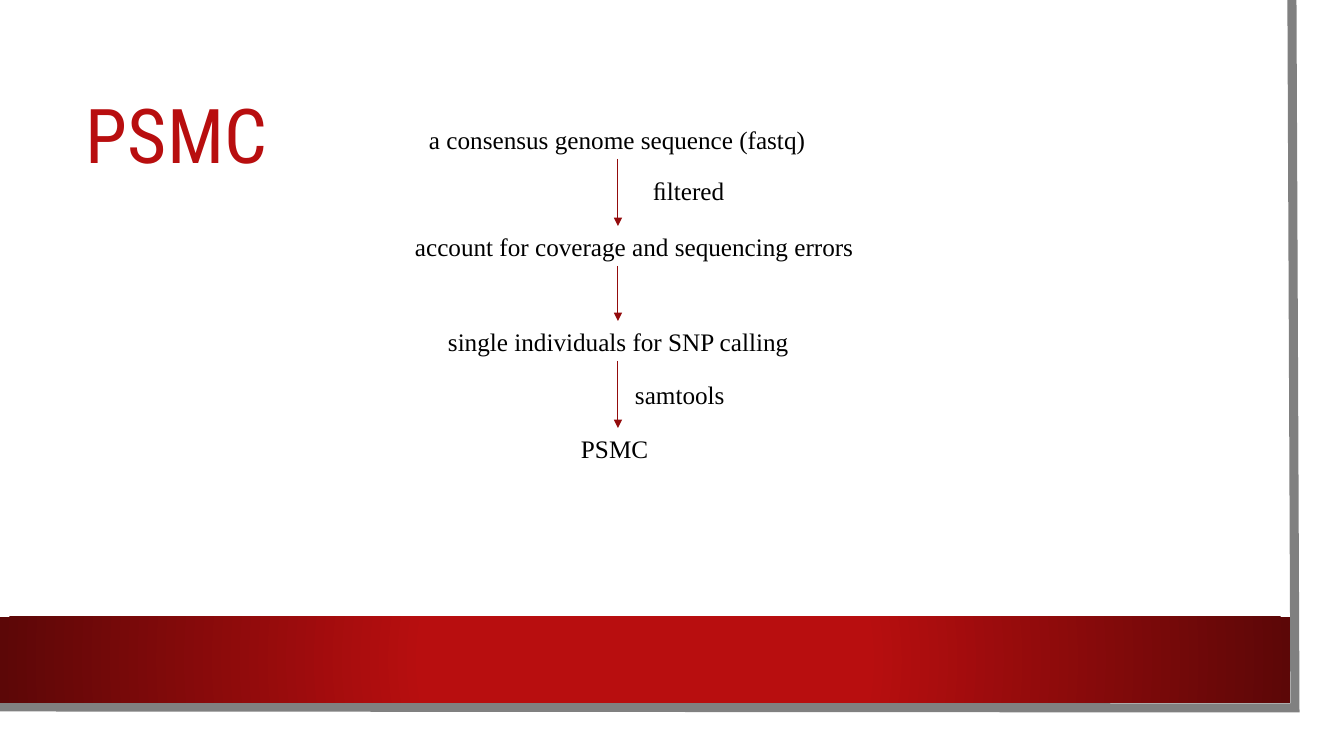
from lxml import etree
from pptx import Presentation
from pptx.dml.color import RGBColor
from pptx.enum.shapes import MSO_CONNECTOR, MSO_SHAPE
from pptx.enum.text import MSO_ANCHOR
from pptx.oxml.ns import qn
from pptx.util import Emu, Pt

STRAIGHT, RECTANGLE = MSO_CONNECTOR.STRAIGHT, MSO_SHAPE.RECTANGLE
TOP, MIDDLE = MSO_ANCHOR.TOP, MSO_ANCHOR.MIDDLE
TOP_SITE, BOTTOM_SITE = 0, 2

WHITE = RGBColor(0xFF, 0xFF, 0xFF)
BLACK = RGBColor(0x00, 0x00, 0x00)
GREY = RGBColor(0x80, 0x80, 0x80)
RED = RGBColor(0xB8, 0x0E, 0x0F)
DARK_RED = RGBColor(0x5C, 0x07, 0x07)
ARROW_RED = RGBColor(0x93, 0x0B, 0x0C)

# Content: lengths in px; each entry is text, left, top, width, left inset
TITLE = "PSMC"
STEPS = [
    ("a consensus genome sequence (fastq)", 413, 119, 410, 16),
    ("account for coverage and sequencing errors", 399, 226, 499, 16),
    ("single individuals for SNP calling", 432, 321, 372, 16),
    ("PSMC", 571, 428, 94, 10),
]
LABELS = [
    ("ﬁltered", 637, 170, 105, 16),
    ("samtools", 625, 374, 273, 10),
]
FRAME = [(1292, 0), (1295, 708), (-3, 707)]
BAR_STOPS = [(0.34, RED), (1.0, DARK_RED)]
STEP_HEIGHT = 40
ARROW_X = 618


def px(length):
    return Emu(round(length * 914400 / 100.8))


deck = Presentation()
deck.slide_width, deck.slide_height = px(1344), px(756)
page = deck.slides.add_slide(deck.slide_layouts[6])


def add_rectangle(left, top, width, height):
    box = page.shapes.add_shape(RECTANGLE, px(left), px(top), px(width), px(height))
    box.shadow.inherit = False
    box.line.fill.background()
    return box


def add_text(text, left, top, width, height=STEP_HEIGHT, inset=10, size=18,
             font="Times New Roman", color=BLACK, anchor=TOP, spacing=1.0):
    box = page.shapes.add_textbox(px(left), px(top), px(width), px(height))
    frame = box.text_frame
    frame.word_wrap = True
    frame.vertical_anchor = anchor
    frame.margin_left = px(inset)
    para = frame.paragraphs[0]
    para.line_spacing = spacing
    span = para.add_run()
    span.text = text
    span.font.name, span.font.size = font, Pt(size)
    span.font.color.rgb = color
    return box


def add_arrow(upper, lower):
    arrow = page.shapes.add_connector(
        STRAIGHT, px(ARROW_X), upper.top + upper.height, px(ARROW_X), lower.top)
    if is_centred(upper):
        arrow.begin_connect(upper, BOTTOM_SITE)
    if is_centred(lower):
        arrow.end_connect(lower, TOP_SITE)
    arrow.line.color.rgb, arrow.line.width = ARROW_RED, Pt(0.75)
    etree.SubElement(arrow.line._get_or_add_ln(), qn("a:tailEnd"), type="triangle")
    etree.SubElement(arrow._element.spPr, qn("a:effectLst"))


def is_centred(box):
    return abs(box.left + box.width // 2 - px(ARROW_X)) < px(1)


# White panel with its grey edge
panel = add_rectangle(0, 0, 1320, 733)
panel.fill.solid()
panel.fill.fore_color.rgb = WHITE

builder = page.shapes.build_freeform(*FRAME[0], scale=px(1000) / 1000)
builder.add_line_segments(FRAME[1:], close=False)
edge = builder.convert_to_shape()
edge.shadow.inherit = False
edge.fill.background()
edge.line.color.rgb, edge.line.width = GREY, Pt(6.5)
etree.SubElement(edge.line._get_or_add_ln(), qn("a:miter"), lim="800000")

# Red bar with a gradient that darkens outwards from its centre
bar = add_rectangle(0, 617, 1290, 86)
bar.fill.gradient()
for stop, (position, color) in zip(bar.fill.gradient_stops, BAR_STOPS):
    stop.position, stop.color.rgb = position, color
gradient = bar._element.spPr.find(qn("a:gradFill"))
gradient.remove(gradient.find(qn("a:lin")))
circle = etree.SubElement(gradient, qn("a:path"), path="circle")
etree.SubElement(circle, qn("a:fillToRect"), l="50000", t="50000", r="50000", b="50000")

# Title
add_text(TITLE, 76, 76, 1146, height=127, size=54, font="Roboto Condensed",
         color=RED, anchor=MIDDLE, spacing=0.9)

# Flow: steps, arrows between neighbours, labels beside the arrows
steps = [add_text(text, left, top, width, inset=inset)
         for text, left, top, width, inset in STEPS]
for upper, lower in zip(steps, steps[1:]):
    add_arrow(upper, lower)
for text, left, top, width, inset in LABELS:
    add_text(text, left, top, width, inset=inset)

deck.save("out.pptx")
